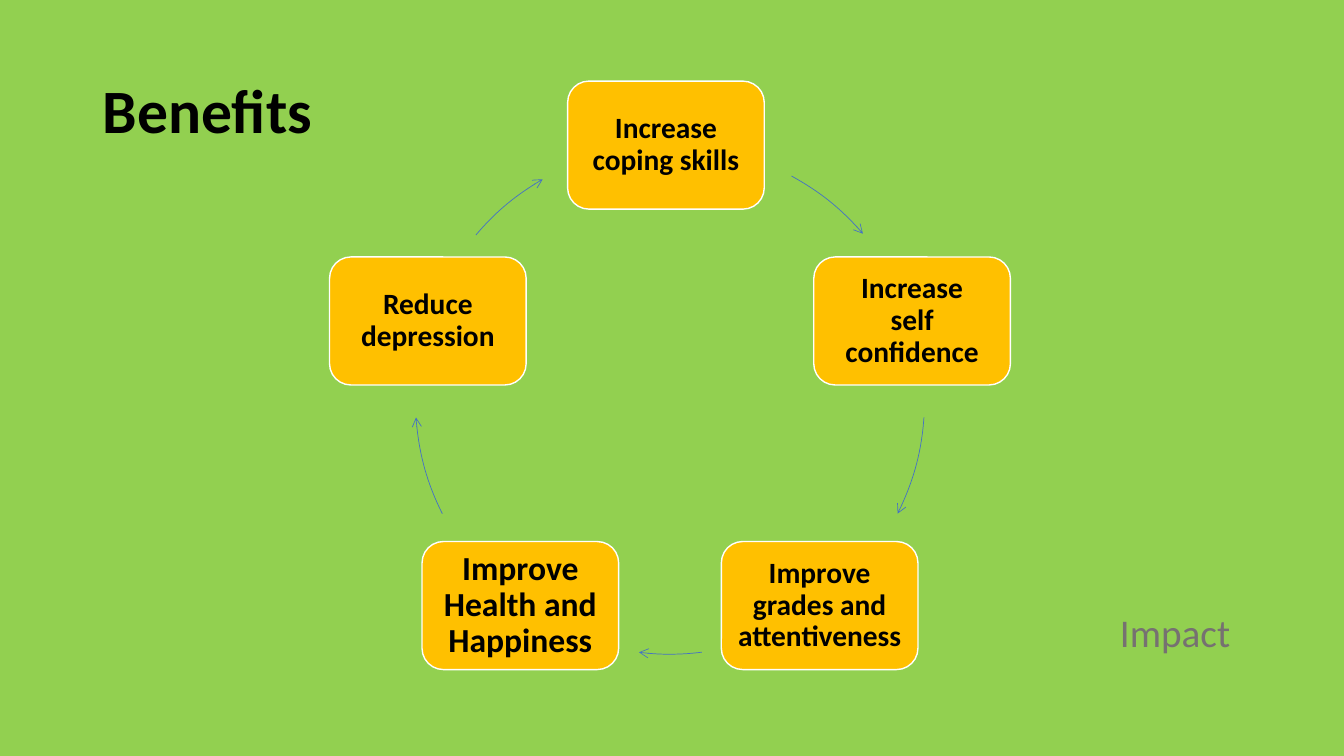
from dataclasses import dataclass
from math import cos, radians, sin

from lxml import etree
from pptx import Presentation
from pptx import util as u
from pptx.dml.color import RGBColor
from pptx.enum import shapes, text
from pptx.oxml import ns

SLIDE_WIDTH, SLIDE_HEIGHT = 13.33, 7.5


@dataclass(frozen=True)
class Theme:
    font: str = "Calibri"
    background: str = "92D050"
    card: str = "FFC000"
    border: str = "FFFFFF"
    arrow: str = "4472C4"
    ink: str = "000000"
    muted: str = "767171"
    title_size: int = 44
    caption_size: int = 28
    card_size: int = 21
    emphasis_size: int = 24


THEME = Theme()

# Wording, type size, and sideways nudge of each card, clockwise from the top
BENEFITS = [
    ("Increase coping skills", THEME.card_size, -0.04),
    ("Increase\vself confidence", THEME.card_size, 0),
    ("Improve grades and attentiveness", THEME.card_size, 0),
    ("Improve Health and Happiness", THEME.emphasis_size, 0),
    ("Reduce depression", THEME.card_size, 0),
]
# Start and end of each arrow, in degrees clockwise from the top
ARROWS = [(28.5, 49.3), (94, 116.6), (172.8, 187), (243.4, 266), (310.3, 330)]


def inches(*lengths):
    return [u.Inches(length) for length in lengths]


def style(paragraph, size, color, bold=False):
    font = paragraph.font
    font.name, font.size, font.bold = THEME.font, u.Pt(size), bold
    font.color.rgb = RGBColor.from_string(color)


def add_title(slide, box, wording):
    title = slide.shapes.title
    title.left, title.top, title.width, title.height = inches(*box)
    frame = title.text_frame
    frame.text = wording
    frame.vertical_anchor = text.MSO_ANCHOR.MIDDLE
    paragraph = frame.paragraphs[0]
    paragraph.alignment = text.PP_ALIGN.LEFT
    paragraph.line_spacing = 0.9
    style(paragraph, THEME.title_size, THEME.ink, bold=True)


def add_caption(slide, box, wording):
    frame = slide.shapes.add_textbox(*inches(*box)).text_frame
    frame.word_wrap = True
    frame.text = wording
    style(frame.paragraphs[0], THEME.caption_size, THEME.muted)


def add_card(slide, box, wording, size):
    card = slide.shapes.add_shape(
        shapes.MSO_SHAPE.ROUNDED_RECTANGLE, *inches(*box))
    card.shadow.inherit = False
    card.fill.solid()
    card.fill.fore_color.rgb = RGBColor.from_string(THEME.card)
    card.line.color.rgb = RGBColor.from_string(THEME.border)
    card.line.width = u.Pt(1)
    frame = card.text_frame
    frame.word_wrap = True
    frame.vertical_anchor = text.MSO_ANCHOR.MIDDLE
    frame.margin_left = frame.margin_right = u.Inches(0.08)
    frame.margin_top = frame.margin_bottom = u.Inches(0.08)
    frame.text = wording
    paragraph = frame.paragraphs[0]
    paragraph.alignment = text.PP_ALIGN.CENTER
    paragraph.line_spacing = 0.9
    style(paragraph, size, THEME.ink, bold=True)


def add_arc_arrow(slide, box, start, end):
    """Draw a clockwise arrow on the circle inscribed in box."""
    arc = slide.shapes.add_shape(shapes.MSO_SHAPE.ARC, *inches(*box))
    arc.shadow.inherit = False
    arc.fill.background()
    # Arc angles count from three o'clock, in 0.6 units per degree
    for index, angle in enumerate((start, end)):
        arc.adjustments[index] = (angle - 90) % 360 * 0.6
    arc.line.color.rgb = RGBColor.from_string(THEME.arrow)
    arc.line.width = u.Pt(0.5)
    etree.SubElement(arc.line._get_or_add_ln(), ns.qn("a:tailEnd"), type="arrow")


def add_cycle(slide, box):
    """Place the cards evenly on the circle in box, linked by arc arrows."""
    left, top, diameter, _ = box
    radius = diameter / 2
    card_width, card_height = 1.95, 1.27
    step = 360 / len(BENEFITS)
    for index, (wording, size, nudge) in enumerate(BENEFITS):
        angle = radians(index * step)
        center_x = left + radius * (1 + sin(angle)) + nudge
        center_y = top + radius * (1 - cos(angle))
        card_box = (center_x - card_width / 2, center_y - card_height / 2,
                    card_width, card_height)
        add_card(slide, card_box, wording, size)
        add_arc_arrow(slide, box, *ARROWS[index])


def add_benefits_slide(deck):
    slide = deck.slides.add_slide(deck.slide_layouts[5])
    slide.background.fill.solid()
    slide.background.fill.fore_color.rgb = RGBColor.from_string(THEME.background)
    add_title(slide, (0.92, 0.4, 11.5, 1.45), "Benefits")
    add_cycle(slide, (4.12, 1.44, 5.05, 5.05))
    add_caption(slide, (11.01, 5.99, 1.45, 0.57), "Impact")


def main():
    deck = Presentation()
    deck.slide_width, deck.slide_height = inches(SLIDE_WIDTH, SLIDE_HEIGHT)
    add_benefits_slide(deck)
    deck.save("out.pptx")


if __name__ == "__main__":
    main()
